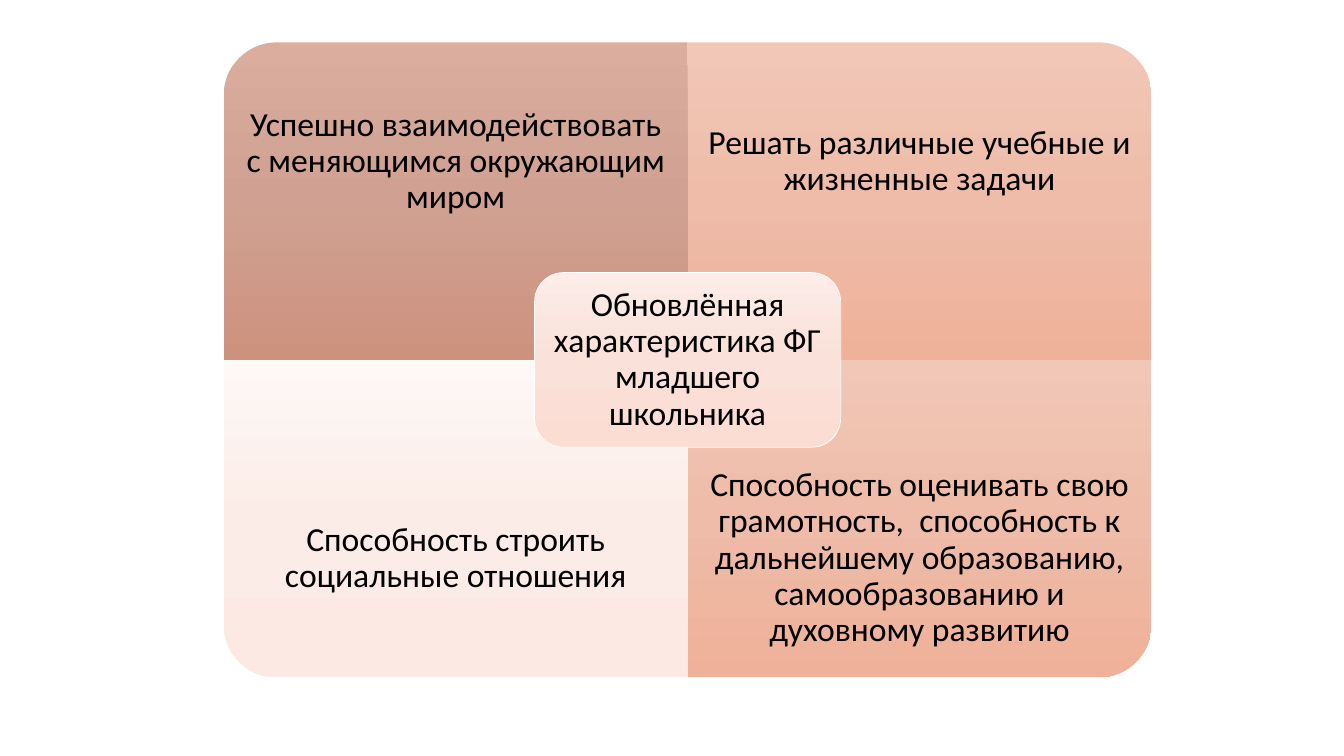
"""Build a slide with a four-part matrix around a central title."""
import pptx
import pptx.dml.color
import pptx.enum.shapes
import pptx.enum.text
import pptx.oxml
import pptx.oxml.ns
import pptx.util

SHAPE = pptx.enum.shapes.MSO_SHAPE
COLORS = {
    "text": "000000",
    "outline": "FFFFFF",
    "rust": ("DAAD9F", "D0A192", "CD927E"),
    "peach": ("F2C7B7", "EEBCA9", "EFB199"),
    "cream": ("FEF8F6", "FCECE7", "FCE9E4"),
    "center": ("FCEDE8", "FAE1D9", "FBDDD3"),
}
QUADRANTS = [
    (0, 0, 270, "rust", "Успешно взаимодействовать с меняющимся окружающим миром"),
    (1, 0, 0, "peach", "Решать различные учебные и жизненные задачи"),
    (0, 1, 180, "cream", "Способность строить социальные отношения"),
    (1, 1, 90, "peach", "Способность оценивать свою грамотность,  способность к "
     "дальнейшему образованию, самообразованию и духовному развитию"),
]


class Matrix:
    font, size, spacing = "Calibri", 24, 0.9
    left, top, col, row = 2.22, 0.42, 4.6, 3.15
    text_share = 0.75

    def __init__(self, s):
        self.s = s

    def box(self, x, y, w, h):
        return [pptx.util.Inches(v) for v in
                (self.left + x * self.col, self.top + y * self.row, w * self.col, h * self.row)]

    def gradient(self, sp, name):
        sp.shadow.inherit = False
        sp.fill.background()
        stops = "".join(f'<a:gs pos="{i * 50000}"><a:srgbClr val="{c}"/></a:gs>'
                        for i, c in enumerate(COLORS[name]))
        grad = pptx.oxml.parse_xml(
            f'<a:gradFill {pptx.oxml.ns.nsdecls("a")} rotWithShape="0"><a:gsLst>{stops}</a:gsLst>'
            '<a:lin ang="5400000" scaled="0"/></a:gradFill>')
        no_fill = sp.element.spPr.find(pptx.oxml.ns.qn("a:noFill"))
        no_fill.getparent().replace(no_fill, grad)

    def label(self, sp, text, inset):
        tf = sp.text_frame
        tf.word_wrap = True
        tf.vertical_anchor = pptx.enum.text.MSO_ANCHOR.MIDDLE
        tf.margin_left = tf.margin_right = tf.margin_top = tf.margin_bottom = pptx.util.Inches(inset)
        p = tf.paragraphs[0]
        p.text = text
        p.alignment = pptx.enum.text.PP_ALIGN.CENTER
        p.line_spacing = self.spacing
        p.font.name = self.font
        p.font.size = pptx.util.Pt(self.size)
        p.font.color.rgb = pptx.dml.color.RGBColor.from_string(COLORS["text"])

    def quadrant(self, x, y, angle, color, text):
        left, top, w, h = self.box(x, y, 1, 1)
        if angle % 180:
            left, top, w, h = left + (w - h) // 2, top + (h - w) // 2, h, w
        sp = self.s.shapes.add_shape(SHAPE.ROUND_1_RECTANGLE, left, top, w, h)
        sp.rotation = angle
        self.gradient(sp, color)
        sp.line.fill.background()
        caption = self.s.shapes.add_textbox(
            *self.box(x, y + y * (1 - self.text_share), 1, self.text_share))
        self.label(caption, text, 0.19)

    def center(self, text, w, h):
        sp = self.s.shapes.add_shape(SHAPE.ROUNDED_RECTANGLE, *self.box(1 - w / 2, 1 - h / 2, w, h))
        self.gradient(sp, "center")
        sp.line.color.rgb = pptx.dml.color.RGBColor.from_string(COLORS["outline"])
        sp.line.width = pptx.util.Pt(0.5)
        self.label(sp, text, 0.1)


def main():
    prs = pptx.Presentation()
    prs.slide_width = pptx.util.Inches(13.33)
    prs.slide_height = pptx.util.Inches(7.5)
    matrix = Matrix(prs.slides.add_slide(prs.slide_layouts[6]))
    for quadrant in QUADRANTS:
        matrix.quadrant(*quadrant)
    matrix.center("Обновлённая характеристика ФГ младшего школьника", 0.66, 0.55)
    prs.save("out.pptx")


if __name__ == "__main__":
    main()
